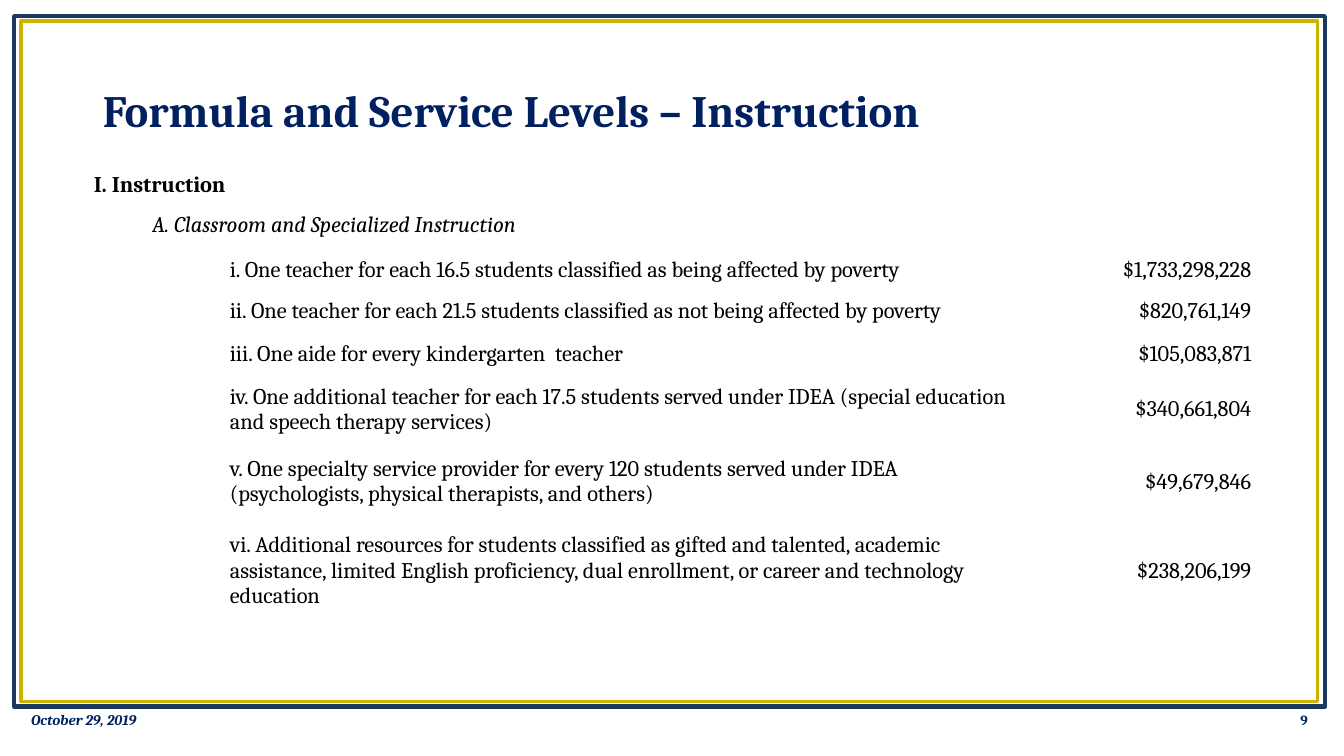
from dataclasses import dataclass

from pptx import Presentation
from pptx.dml.color import RGBColor
from pptx.enum.shapes import MSO_SHAPE
from pptx.enum.text import MSO_ANCHOR, PP_ALIGN
from pptx.slide import Slide
from pptx.table import _Cell
from pptx.text.text import TextFrame
from pptx.util import Inches, Pt

RECT = MSO_SHAPE.RECTANGLE
MIDDLE, BOTTOM = MSO_ANCHOR.MIDDLE, MSO_ANCHOR.BOTTOM
LEFT, RIGHT = PP_ALIGN.LEFT, PP_ALIGN.RIGHT


@dataclass(frozen=True)
class Theme:
    font: str = "Cambria"
    navy: str = "002060"
    black: str = "000000"
    title: float = 32
    body: float = 16
    date: float = 10.5
    page: float = 10


@dataclass(frozen=True)
class Style:
    size: float
    color: str
    bold: bool = False
    italic: bool = False
    align: PP_ALIGN = LEFT
    anchor: MSO_ANCHOR = MIDDLE


@dataclass(frozen=True)
class Frame:
    left: float
    top: float
    width: float
    height: float
    color: str
    weight: float


@dataclass(frozen=True)
class Footer:
    left: float
    text: str
    style: Style


@dataclass(frozen=True)
class Item:
    text: str
    amount: str
    height: float


THEME = Theme()
TITLE = Style(THEME.title, THEME.navy, bold=True)
HEAD = Style(THEME.body, THEME.black, bold=True, anchor=BOTTOM)
SUBHEAD = Style(THEME.body, THEME.black, italic=True)
BODY = Style(THEME.body, THEME.black)
AMOUNT = Style(THEME.body, THEME.black, align=RIGHT)

FRAMES = [
    Frame(0.14, 0.16, 13, 6.85, "1C3961", 3),
    Frame(0.21, 0.21, 12.86, 6.75, "CCB400", 2.5),
]
FOOTERS = [
    Footer(10.07, "9", Style(THEME.page, THEME.navy, bold=True, align=RIGHT)),
    Footer(0.21, "October 29, 2019",
           Style(THEME.date, THEME.navy, bold=True, italic=True)),
]
WIDTHS = [0.58, 0.77, 8.01, 2.14]
HEAD_HEIGHT = 0.51
ITEMS = [
    Item("i. One teacher for each 16.5 students classified as being affected "
         "by poverty", "$1,733,298,228", 0.4),
    Item("ii. One teacher for each 21.5 students classified as not being "
         "affected by poverty", "$820,761,149", 0.41),
    Item("iii. One aide for every kindergarten  teacher",
         "$105,083,871", 0.43),
    Item("iv. One additional teacher for each 17.5 students served under IDEA "
         "(special education and speech therapy services)",
         "$340,661,804", 0.68),
    Item("v. One specialty service provider for every 120 students served "
         "under IDEA (psychologists, physical therapists, and others)",
         "$49,679,846", 0.75),
    Item("vi. Additional resources for students classified as gifted and "
         "talented, academic assistance, limited English proficiency, dual "
         "enrollment, or career and technology education",
         "$238,206,199", 1.02),
]


def write(frame: TextFrame, text: str, style: Style) -> None:
    frame.text = text
    line = frame.paragraphs[0]
    line.alignment = style.align
    font = line.runs[0].font
    font.name = THEME.font
    font.size = Pt(style.size)
    font.bold = style.bold
    font.italic = style.italic
    font.color.rgb = RGBColor.from_string(style.color)


def draw_frame(slide: Slide, frame: Frame) -> None:
    shape = slide.shapes.add_shape(
        RECT, Inches(frame.left), Inches(frame.top),
        Inches(frame.width), Inches(frame.height))
    shape.shadow.inherit = False
    shape.fill.background()
    shape.line.color.rgb = RGBColor.from_string(frame.color)
    shape.line.width = Pt(frame.weight)


def draw_title(slide: Slide, text: str) -> None:
    title = slide.shapes.title
    title.left, title.top = Inches(0.92), Inches(0.4)
    title.width, title.height = Inches(11.5), Inches(1.45)
    frame = title.text_frame
    frame.word_wrap = True
    frame.vertical_anchor = MIDDLE
    write(frame, text, TITLE)
    frame.paragraphs[0].line_spacing = 0.9


def draw_footer(slide: Slide, footer: Footer) -> None:
    box = slide.shapes.add_textbox(
        Inches(footer.left), Inches(6.94), Inches(3), Inches(0.4))
    frame = box.text_frame
    frame.word_wrap = True
    frame.vertical_anchor = footer.style.anchor
    write(frame, footer.text, footer.style)


def fill_cell(cell: _Cell, text: str, style: Style) -> None:
    cell.vertical_anchor = style.anchor
    write(cell.text_frame, text, style)


def draw_table(slide: Slide) -> None:
    heights = [HEAD_HEIGHT] * 2 + [item.height for item in ITEMS]
    table = slide.shapes.add_table(
        len(heights), len(WIDTHS), Inches(0.92), Inches(1.46),
        Inches(sum(WIDTHS)), Inches(sum(heights))).table
    table.first_row = False
    table.horz_banding = False
    for col, width in zip(table.columns, WIDTHS):
        col.width = Inches(width)
    for row, height in zip(table.rows, heights):
        row.height = Inches(height)
    for cell in table.iter_cells():
        cell.fill.background()
        cell.margin_left = cell.margin_right = cell.margin_top = Inches(0.01)
        cell.margin_bottom = 0

    table.cell(0, 0).merge(table.cell(0, 2))
    table.cell(1, 1).merge(table.cell(1, 2))
    fill_cell(table.cell(0, 0), "I. Instruction", HEAD)
    fill_cell(table.cell(1, 1), "A. Classroom and Specialized Instruction",
              SUBHEAD)
    for row, item in enumerate(ITEMS, start=2):
        fill_cell(table.cell(row, 2), item.text, BODY)
        fill_cell(table.cell(row, 3), item.amount, AMOUNT)


def main() -> None:
    deck = Presentation()
    deck.slide_width, deck.slide_height = Inches(13.33), Inches(7.5)
    slide = deck.slides.add_slide(deck.slide_layouts.get_by_name("Title Only"))
    for frame in FRAMES:
        draw_frame(slide, frame)
    draw_title(slide, "Formula and Service Levels – Instruction")
    draw_table(slide)
    for footer in FOOTERS:
        draw_footer(slide, footer)
    deck.save("out.pptx")


if __name__ == "__main__":
    main()
